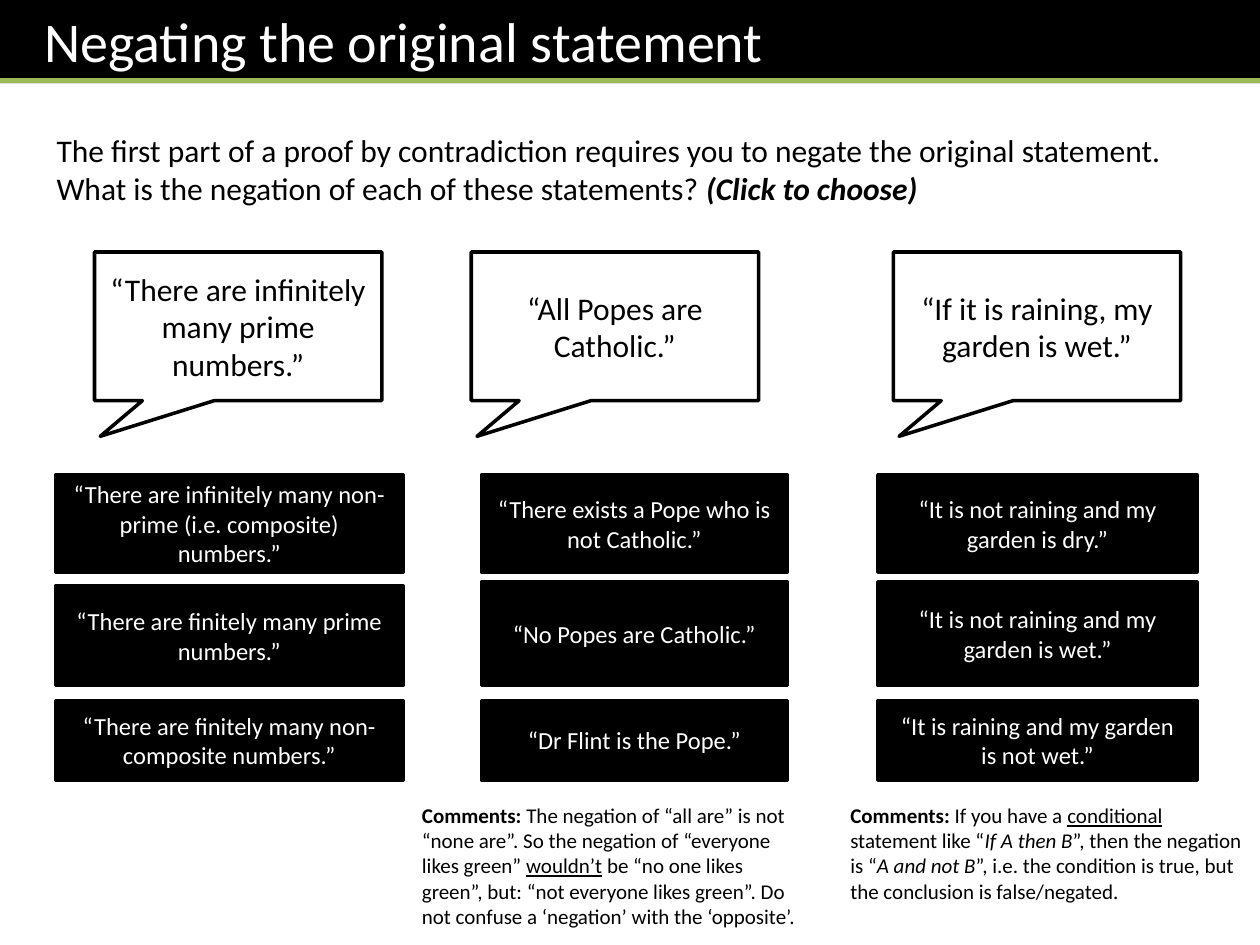
import dataclasses
import typing

import pptx
import pptx.dml.color
import pptx.enum.shapes
import pptx.enum.text
import pptx.oxml.ns
import pptx.util
import lxml.etree

GRID_COLUMNS, GRID_ROWS = 100, 75
SLIDE_WIDTH, SLIDE_HEIGHT = pptx.util.Inches(10), pptx.util.Inches(7.5)
BLACK, WHITE, GREEN = "000000", "FFFFFF", "9BBB59"
FONT = "Calibri"
CENTER = pptx.enum.text.PP_ALIGN.CENTER
MIDDLE = pptx.enum.text.MSO_ANCHOR.MIDDLE
RECTANGLE = pptx.enum.shapes.MSO_SHAPE.RECTANGLE
CALLOUT = pptx.enum.shapes.MSO_SHAPE.RECTANGULAR_CALLOUT


@dataclasses.dataclass(frozen=True)
class Area:
    column: float
    row: float
    columns: float
    rows: float


@dataclasses.dataclass(frozen=True)
class Span:
    text: str
    style: str = ""


@dataclasses.dataclass(frozen=True)
class Question:
    statement: str
    callout_column: float
    choice_column: float
    choice_columns: float
    choices: tuple[str, str, str]
    middle_row: float = 46.2


QUESTIONS = (
    Question("“There are infinitely many prime numbers.”", 7.5, 4.4, 27.6, (
        "“There are infinitely many non-prime (i.e. composite) numbers.”",
        "“There are finitely many prime numbers.”",
        "“There are finitely many non-composite numbers.”"), 46.5),
    Question("“All Popes are Catholic.”", 37.4, 38.2, 24.3, (
        "“There exists a Pope who is not Catholic.”",
        "“No Popes are Catholic.”",
        "“Dr Flint is the Pope.”")),
    Question("“If it is raining, my garden is wet.”", 70.9, 69.7, 25.3, (
        "“It is not raining and my garden is dry.”",
        "“It is not raining and my garden is wet.”",
        "“It is raining and my garden is not wet.”")),
)

INTRODUCTION = (
    (Span("The first part of a proof by contradiction requires you to negate the original statement."),),
    (Span("What is the negation of each of these statements? "),
     Span("(Click to choose)", "bold italic")),
)

COMMENTS = (
    (Area(32.5, 63.2, 32.2, 11.1), (
        Span("Comments:", "bold"),
        Span(" The negation of “all are” is not “none are”. So the negation of “everyone likes green” "),
        Span("wouldn’t", "underline"),
        Span(" be “no one likes green”, but: “not everyone likes green”. "
             "Do not confuse a ‘negation’ with the ‘opposite’."))),
    (Area(66.5, 63.2, 33.5, 9.1), (
        Span("Comments:", "bold"),
        Span(" If you have a "),
        Span("conditional", "underline"),
        Span(" statement like “"),
        Span("If A then B", "italic"),
        Span("”, then the negation is “"),
        Span("A and not B", "italic"),
        Span("”, i.e. the condition is true, but the conclusion is false/negated."))),
)


def color(value: str) -> pptx.dml.color.RGBColor:
    return pptx.dml.color.RGBColor.from_string(value)


def across(columns: float) -> int:
    return round(SLIDE_WIDTH * columns / GRID_COLUMNS)


def down(rows: float) -> int:
    return round(SLIDE_HEIGHT * rows / GRID_ROWS)


def bounds(area: Area) -> tuple[int, int, int, int]:
    return across(area.column), down(area.row), across(area.columns), down(area.rows)


def set_font(para: typing.Any, size: float, value: str) -> None:
    para.font.name = FONT
    para.font.size = pptx.util.Pt(size)
    para.font.color.rgb = color(value)


def draw_title(page: typing.Any, text: str) -> None:
    title = page.shapes.title
    title.left, title.top, title.width, title.height = bounds(Area(0, 0, 100, 6.6))
    title.fill.solid()
    title.fill.fore_color.rgb = color(BLACK)
    frame = title.text_frame
    frame.text = text
    frame.auto_size = pptx.enum.text.MSO_AUTO_SIZE.NONE
    frame.vertical_anchor = pptx.enum.text.MSO_ANCHOR.TOP
    frame.margin_left = across(3.5)
    para = frame.paragraphs[0]
    para.alignment = pptx.enum.text.PP_ALIGN.LEFT
    set_font(para, 32, WHITE)

    rule = page.shapes.add_connector(
        pptx.enum.shapes.MSO_CONNECTOR.STRAIGHT, 0, down(6.4), SLIDE_WIDTH, down(6.4))
    rule.line.color.rgb = color(GREEN)
    rule.line.width = pptx.util.Pt(3)
    lxml.etree.SubElement(rule.element.spPr, pptx.oxml.ns.qn("a:effectLst"))


def draw_text(page: typing.Any, area: Area, paragraphs: typing.Sequence[typing.Sequence[Span]],
              size: float) -> None:
    frame = page.shapes.add_textbox(*bounds(area)).text_frame
    frame.word_wrap = True
    for index, spans in enumerate(paragraphs):
        para = frame.add_paragraph() if index else frame.paragraphs[0]
        set_font(para, size, BLACK)
        for span in spans:
            run = para.add_run()
            run.text = span.text
            for style in span.style.split():
                setattr(run.font, style, True)


def draw_box(page: typing.Any, kind: typing.Any, area: Area, text: str, size: float,
             fill: str, ink: str) -> typing.Any:
    box = page.shapes.add_shape(kind, *bounds(area))
    box.shadow.inherit = False
    box.fill.solid()
    box.fill.fore_color.rgb = color(fill)
    box.line.color.rgb = color(BLACK)
    box.line.width = pptx.util.Pt(2)
    frame = box.text_frame
    frame.text = text
    frame.word_wrap = True
    frame.vertical_anchor = MIDDLE
    para = frame.paragraphs[0]
    para.alignment = CENTER
    set_font(para, size, ink)
    return box


def draw_question(page: typing.Any, question: Question) -> None:
    callout = draw_box(page, CALLOUT, Area(question.callout_column, 20, 22.8, 11.8),
                       question.statement, 18, WHITE, BLACK)
    callout.adjustments[0], callout.adjustments[1] = -0.48, 0.74
    middle_rows = 54.4 - question.middle_row
    choice_rows = ((37.7, 7.7), (question.middle_row, middle_rows), (55.6, 6.3))
    for text, (row, rows) in zip(question.choices, choice_rows):
        area = Area(question.choice_column, row, question.choice_columns, rows)
        draw_box(page, RECTANGLE, area, text, 14, BLACK, WHITE)


def main() -> None:
    deck = pptx.Presentation()
    deck.slide_width, deck.slide_height = SLIDE_WIDTH, SLIDE_HEIGHT
    page = deck.slides.add_slide(deck.slide_layouts.get_by_name("Title Only"))
    draw_title(page, "Negating the original statement")
    draw_text(page, Area(3.5, 9.9, 92.1, 10.1), INTRODUCTION, 18)
    for question in QUESTIONS:
        draw_question(page, question)
    for area, spans in COMMENTS:
        draw_text(page, area, (spans,), 12)
    deck.save("out.pptx")


if __name__ == "__main__":
    main()
